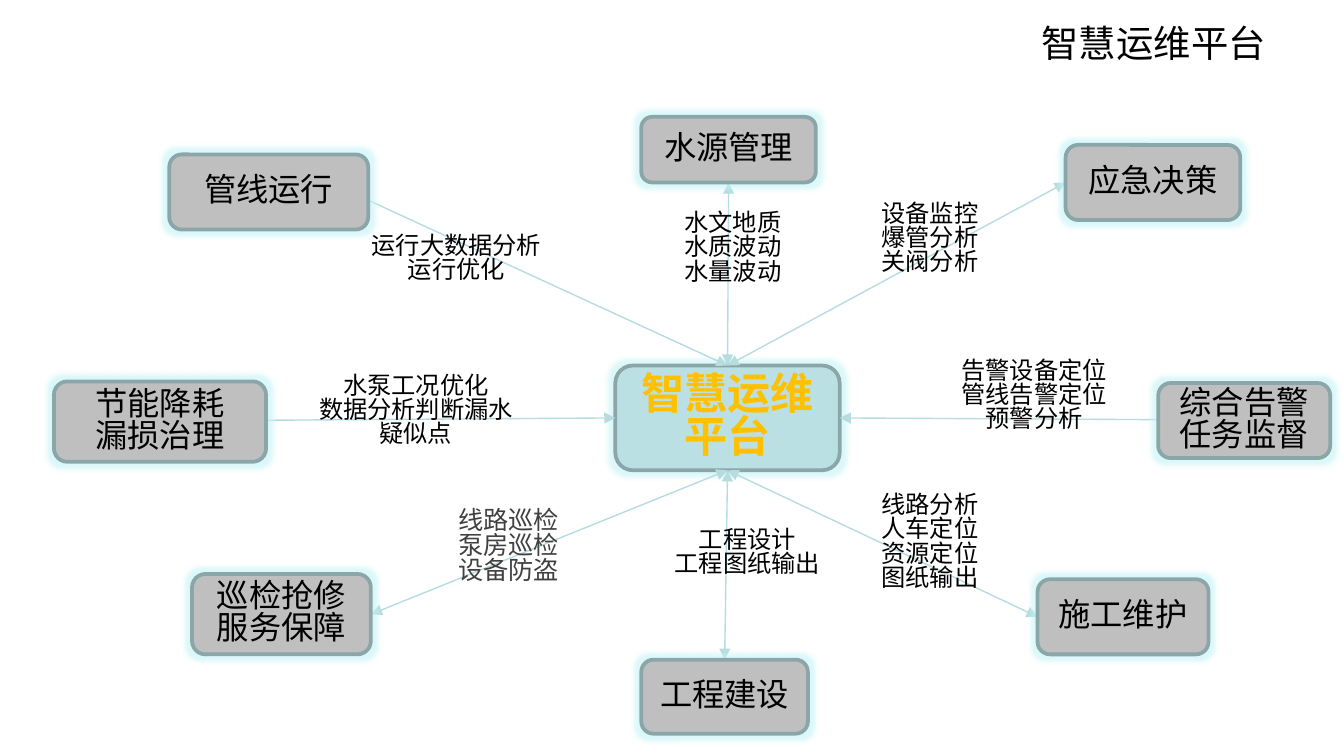
from lxml import etree
from pptx import Presentation
from pptx.dml.color import RGBColor
from pptx.enum.shapes import MSO_CONNECTOR, MSO_SHAPE
from pptx.enum.text import MSO_ANCHOR, PP_ALIGN
from pptx.oxml.ns import qn
from pptx.util import Cm, Pt

ROUND = MSO_SHAPE.ROUNDED_RECTANGLE
STRAIGHT = MSO_CONNECTOR.STRAIGHT
LEFT, CENTER = PP_ALIGN.LEFT, PP_ALIGN.CENTER
TOP, MIDDLE = MSO_ANCHOR.TOP, MSO_ANCHOR.MIDDLE
N, W, S, E = range(4)  # connection sites of a rectangle

FONT = "Noto Sans CJK SC"
SPACING = 0.83
COLORS = {
    "hub": "BBE0E3", "node": "BFBFBF", "edge": "8AA6A8", "link": "B6DCDF",
    "glow": "C4F4F7", "gold": "FFC000", "text": "000000", "gray": "404040",
}

# node box, node lines, node site, hub site, note box, note lines, note align
TOPICS = [
    ((21.89, 7.24, 3.25, 1.42), ["综合告警", "任务监督"], E, E,
     (17.88, 6.68, 3.33, 1.93), ["告警设备定位", "管线告警定位预警分析"], CENTER),
    ((12.12, 12.47, 3.15, 1.4), ["工程建设"], N, S,
     (12.37, 9.88, 3.51, 1.37), ["工程设计", "工程图纸输出"], CENTER),
    ((19.61, 10.95, 3.23, 1.42), ["施工维护"], W, S,
     (16.41, 9.22, 3.12, 2.46),
     ["线路分析", "人车定位", "资源定位", "图纸输出"], LEFT),
    ((3.63, 10.85, 3.38, 1.52), ["巡检抢修", "服务保障"], E, S,
     (8.41, 9.5, 3.25, 1.98), ["线路巡检", "泵房巡检", "设备防盗"], LEFT),
    ((12.12, 2.21, 3.3, 1.24), ["水源管理"], S, N,
     (11.96, 3.89, 3.78, 1.93), ["水文地质", "水质波动", "水量波动"], CENTER),
    ((3.2, 2.92, 3.76, 1.42), ["管线运行"], N, N,
     (6.3, 4.32, 4.65, 1.37), ["运行大数据分析", "运行优化"], CENTER),
    ((1.02, 7.21, 4.01, 1.52), ["节能降耗", "漏损治理"], W, W,
     (5.74, 6.96, 4.24, 1.93), ["水泵工况优化", "数据分析判断漏水疑似点"], CENTER),
    ((20.14, 2.74, 3.3, 1.42), ["应急决策"], W, N,
     (16.41, 3.71, 3.66, 1.93), ["设备监控", "爆管分析", "关阀分析"], LEFT),
]


def paint(name):
    return RGBColor.from_string(COLORS[name])


def write(shape, lines, size, color="text", align=CENTER, anchor=TOP, bold=False):
    frame = shape.text_frame
    frame.word_wrap = True
    frame.vertical_anchor = anchor
    for i, line in enumerate(lines):
        para = frame.paragraphs[0] if i == 0 else frame.add_paragraph()
        para.alignment = align
        para.line_spacing = SPACING
        run = para.add_run()
        run.text = line
        font = run.font
        font.name, font.size, font.bold = FONT, Pt(size), bold
        font.color.rgb = paint(color)
        etree.SubElement(run._r.get_or_add_rPr(), qn("a:ea"), typeface=FONT)


def add_note(slide, box, lines, size=13, color="text", align=CENTER):
    note = slide.shapes.add_textbox(*map(Cm, box))
    write(note, lines, size, color, align)


def add_node(slide, box, lines, fill="node", size=17.3, color="text", bold=False):
    """Draw a rounded box with a soft glow."""
    node = slide.shapes.add_shape(ROUND, *map(Cm, box))
    node.fill.solid()
    node.fill.fore_color.rgb = paint(fill)
    node.line.color.rgb = paint("edge")
    node.line.width = Pt(2)
    node.shadow.inherit = False
    effects = node._element.spPr.find(qn("a:effectLst"))
    glow = etree.SubElement(effects, qn("a:glow"), rad=str(Cm(0.18)))
    tint = etree.SubElement(glow, qn("a:srgbClr"), val=COLORS["glow"])
    etree.SubElement(tint, qn("a:alpha"), val="60000")
    write(node, lines, size, color, anchor=MIDDLE, bold=bold)
    return node


def add_link(slide, node, site, hub, port):
    """Join node and hub with a two-headed arrow that lies behind the node."""
    link = slide.shapes.add_connector(STRAIGHT, 0, 0, 0, 0)
    link.begin_connect(node, site)
    link.end_connect(hub, port)
    link.line.color.rgb = paint("link")
    link.line.width = Pt(0.75)
    stroke = link.line._get_or_add_ln()
    for end in ("a:headEnd", "a:tailEnd"):
        etree.SubElement(stroke, qn(end), type="triangle")
    etree.SubElement(link._element.spPr, qn("a:effectLst"))
    node._element.addprevious(link._element)


def add_topic(slide, hub, topic):
    box, lines, site, port, area, notes, align = topic
    node = add_node(slide, box, lines)
    add_link(slide, node, site, hub, port)
    patrol = lines[0] == "巡检抢修"
    size, color = (13.5, "gray") if patrol else (13, "text")
    add_note(slide, area, notes, size, color, align)


def main():
    deck = Presentation()
    deck.slide_width, deck.slide_height = Cm(25.4), Cm(14.29)
    slide = deck.slides.add_slide(deck.slide_layouts[6])
    hub = add_node(slide, (11.63, 6.91, 4.24, 1.98), ["智慧运维平台"],
                   "hub", 23.1, "gold", True)
    for topic in TOPICS:
        add_topic(slide, hub, topic)
    add_note(slide, (19.1, 0.41, 5.41, 1.12), ["智慧运维平台"], 20)
    deck.save("out.pptx")


if __name__ == "__main__":
    main()
